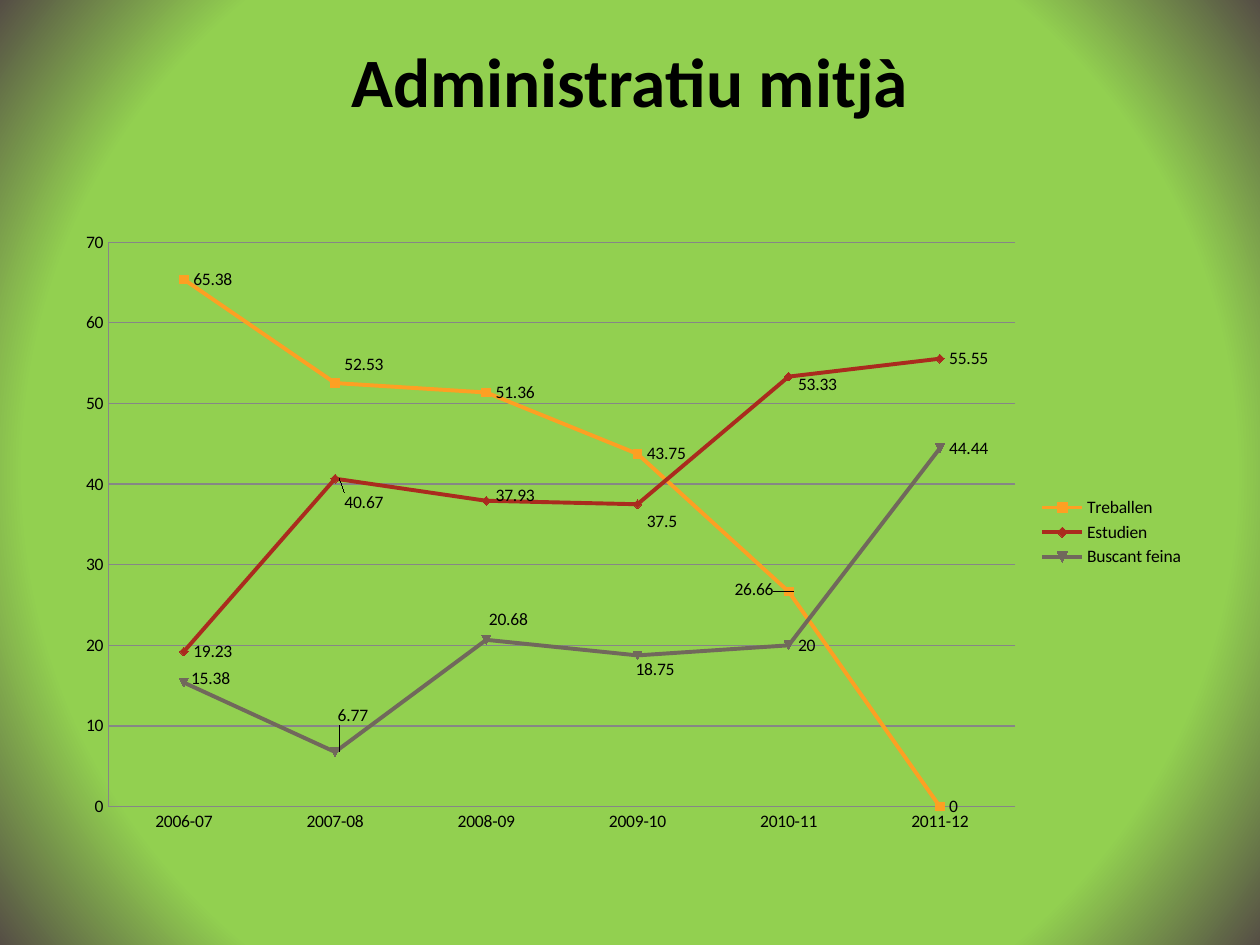
from lxml import etree
from pptx import Presentation, util as u
from pptx.chart.data import CategoryChartData
from pptx.dml.color import RGBColor
from pptx.enum import chart as ch, text
from pptx.oxml import parse_xml
from pptx.oxml.ns import nsdecls, qn

COLORS = {
    "green": "92D050", "edge": "554E45", "text": "000000", "grid": "868686",
    "Treballen": "FDA023", "Estudien": "AA2B1E", "Buscant feina": "71685C",
}
YEARS = ["2006-07", "2007-08", "2008-09", "2009-10", "2010-11", "2011-12"]
VALUES = {
    "Treballen": [65.38, 52.53, 51.36, 43.75, 26.66, 0],
    "Estudien": [19.23, 40.67, 37.93, 37.5, 53.33, 55.55],
    "Buscant feina": [15.38, 6.77, 20.68, 18.75, 20, 44.44],
}
# Label shifts away from the right of the point, in percent of the chart's size
SHIFTS = {
    "Treballen": {1: (0, -3), 4: (-5.6, -0.3)},
    "Estudien": {1: (0, 3.8), 2: (0, -0.8), 3: (0, 2.7), 4: (0, 1.3)},
    "Buscant feina": {0: (-0.2, -0.7), 1: (-0.6, -5.8), 2: (-0.6, -3.2), 3: (-1, 2.2)},
}


def rgb(name):
    return RGBColor.from_string(COLORS[name])


def manual_layout(**settings):
    """Return a c:layout element holding the given manual layout settings."""
    layout = parse_xml(f"<c:layout {nsdecls('c')}><c:manualLayout/></c:layout>")
    for tag, val in settings.items():
        etree.SubElement(layout[0], qn(f"c:{tag}")).set("val", str(val))
    return layout


prs = Presentation()
prs.slide_width, prs.slide_height = u.Inches(10), u.Inches(7.5)
W, H = prs.slide_width, prs.slide_height
s = prs.slides.add_slide(prs.slide_layouts[6])

# Background: radial gradient
fill = s.background.fill
fill.gradient()
for stop, pos, name in zip(fill.gradient_stops, (0.77, 1), ("green", "edge")):
    stop.position = pos
    stop.color.rgb = rgb(name)
grad = s.background._cSld.find(".//" + qn("a:gradFill"))
grad.replace(grad.find(qn("a:lin")), parse_xml(
    f'<a:path {nsdecls("a")} path="circle">'
    '<a:fillToRect l="50000" t="50000" r="50000" b="50000"/></a:path>'))

# Title
tf = s.shapes.add_textbox(int(W * 0.05), int(H * 0.04), int(W * 0.9), int(H / 6)).text_frame
for key, val in {"word_wrap": True, "margin_top": 0,
                 "vertical_anchor": text.MSO_ANCHOR.TOP}.items():
    setattr(tf, key, val)
p = tf.paragraphs[0]
p.alignment = text.PP_ALIGN.CENTER
r = p.add_run()
r.text = "Administratiu mitjà"
for key, val in {"name": "Calibri", "size": u.Pt(39.6), "bold": True}.items():
    setattr(r.font, key, val)
r.font.color.rgb = rgb("text")

# Chart
data = CategoryChartData()
data.categories = YEARS
for name, vals in VALUES.items():
    data.add_series(name, vals)
chart = s.shapes.add_chart(ch.XL_CHART_TYPE.LINE_MARKERS, int(W * 0.05), int(H * 0.2333),
                           int(W * 0.9), int(H * 0.66), data).chart
for key, val in {"name": "Calibri", "size": u.Pt(10)}.items():
    setattr(chart.font, key, val)
chart.font.color.rgb = rgb("text")
chart.has_title = False
chart.has_legend = True
chart.legend.position = ch.XL_LEGEND_POSITION.RIGHT
chart.legend.include_in_layout = False

plot_area = chart._chartSpace.chart.plotArea
for old in plot_area.findall(qn("c:layout")):
    plot_area.remove(old)
plot_area.insert(0, manual_layout(layoutTarget="inner", xMode="edge", yMode="edge",
                                  x=0.04, y=0.035, w=0.8, h=0.905))

cat, val_axis = chart.category_axis, chart.value_axis
val_axis.has_major_gridlines = True
val_axis.minimum_scale, val_axis.maximum_scale, val_axis.major_unit = 0, 70, 10
for axis in (cat, val_axis):
    axis.major_tick_mark = axis.minor_tick_mark = ch.XL_TICK_MARK.NONE
for line in (cat.format.line, val_axis.format.line, val_axis.major_gridlines.format.line):
    line.color.rgb = rgb("grid")
    line.width = u.Pt(0.75)

plot = chart.plots[0]
plot.vary_by_categories = False
for ser in plot.series:
    ser.smooth = False
    ser.format.line.color.rgb = rgb(ser.name)
    ser.format.line.width = u.Pt(2.25)
    ser.marker.format.fill.solid()
    ser.marker.format.fill.fore_color.rgb = rgb(ser.name)
    ser.marker.format.line.color.rgb = rgb(ser.name)
    ser.data_labels.show_value = True
    ser.data_labels.position = ch.XL_LABEL_POSITION.RIGHT
    for i, (dx, dy) in SHIFTS[ser.name].items():
        ser.points[i].data_label.position = ch.XL_LABEL_POSITION.RIGHT
        label = ser.data_labels._element.findall(qn("c:dLbl"))[-1]
        label.insert(1, manual_layout(x=dx / 100, y=dy / 100))

prs.save("out.pptx")
